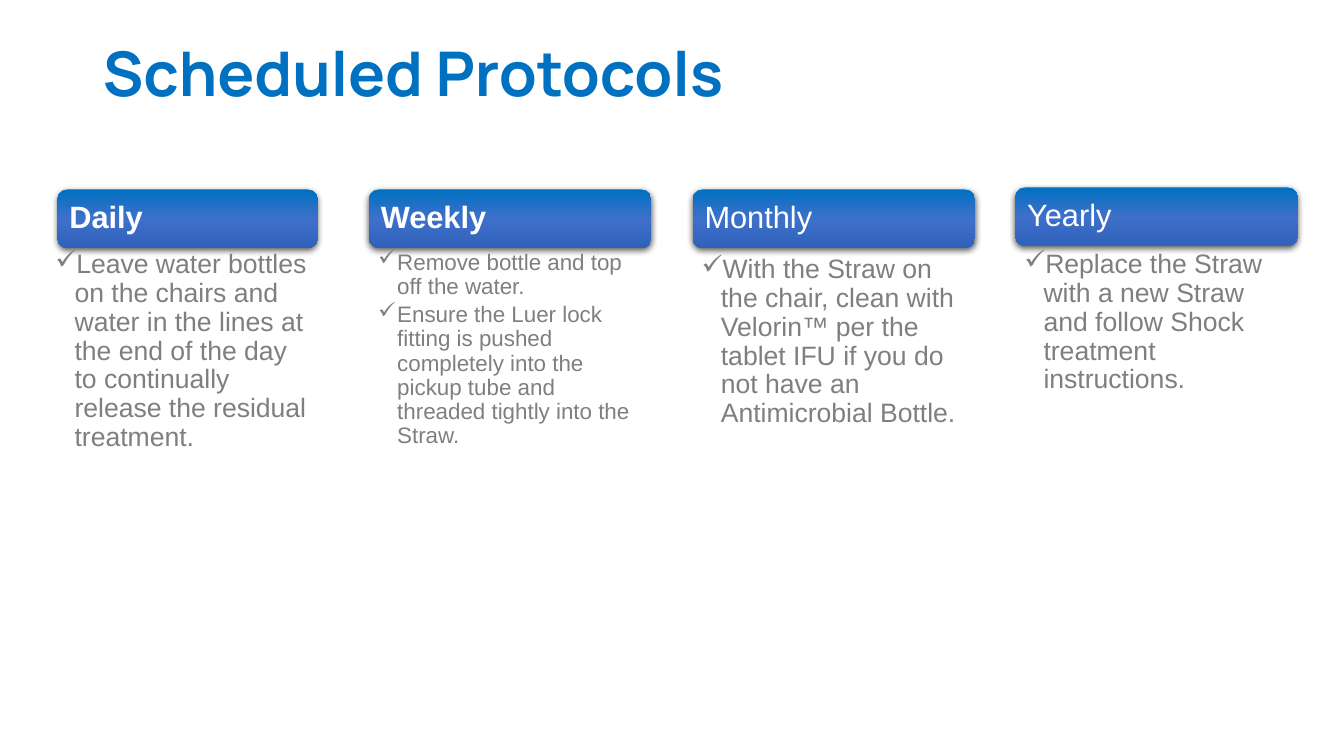
import copy
import pptx
import pptx.dml.color
import pptx.enum.shapes
import pptx.enum.text
import pptx.oxml
import pptx.oxml.ns
import pptx.util

Inches = pptx.util.Inches
Pt = pptx.util.Pt
Anchor = pptx.enum.text.MSO_ANCHOR
Align = pptx.enum.text.PP_ALIGN

TITLE = "Scheduled Protocols"
COLORS = {"title": "0070C0", "head": "FFFFFF", "body": "7F7F7F"}
BLEND = [(0, "0070C0"), (0.5, "3E70CA"), (1, "3062BB")]
CARDS = [
    {"head": "Daily", "bold": True, "size": 19, "pad": 0.15,
     "bar": (0.57, 1.88, 2.58), "box": (0.46, 2.46, 2.06),
     "items": ["Leave water bottles on the chairs and water in the lines at the end "
               "of the day to continually release the residual treatment."]},
    {"head": "Weekly", "bold": True, "size": 16, "pad": 0.16,
     "bar": (3.66, 1.88, 2.8), "box": (3.66, 2.46, 2.04),
     "items": ["Remove bottle and top off the water.",
               "Ensure the Luer lock fitting is pushed completely into the pickup "
               "tube and threaded tightly into the Straw."]},
    {"head": "Monthly", "bold": False, "size": 19, "pad": 0.15,
     "bar": (6.87, 1.88, 2.8), "box": (6.87, 2.51, 1.77),
     "items": ["With the Straw on the chair, clean with Velorin™ per the tablet IFU "
               "if you do not have an Antimicrobial Bottle."]},
    {"head": "Yearly", "bold": False, "size": 19, "pad": 0.19,
     "bar": (10.07, 1.86, 2.8), "box": (10.07, 2.46, 1.49),
     "items": ["Replace the Straw with a new Straw and follow Shock treatment "
               "instructions."]},
]
BAR_H = 0.58
BOX_W = 2.8
HANG = 0.19
NS = pptx.oxml.ns.nsdecls("a")
SHADOW = (f'<a:outerShdw {NS} blurRad="{Pt(4.5)}" dist="{Pt(1.5)}" dir="5400000" '
          'algn="ctr" rotWithShape="0"><a:srgbClr val="000000">'
          '<a:alpha val="63000"/></a:srgbClr></a:outerShdw>')
BULLET = f'<a:buChar {NS} char="✓"/>'


def rgb(code):
    return pptx.dml.color.RGBColor.from_string(code)


def style(par, font, size, color, bold=False):
    par.alignment = Align.LEFT
    par.line_spacing = 0.9
    for run in par.runs:
        run.font.name = font
        run.font.size = Pt(size)
        run.font.bold = bold
        run.font.color.rgb = rgb(color)


def inset(frame, left, top, right, bottom):
    frame.word_wrap = True
    frame.margin_left, frame.margin_top = Inches(left), Inches(top)
    frame.margin_right, frame.margin_bottom = Inches(right), Inches(bottom)


def add_title(slide):
    title = slide.shapes.title
    title.left, title.top = Inches(0.92), Inches(0.4)
    title.width, title.height = Inches(7.51), Inches(0.71)
    frame = title.text_frame
    frame.text = TITLE
    frame.vertical_anchor = Anchor.MIDDLE
    inset(frame, 0.1, 0.05, 0.1, 0.05)
    style(frame.paragraphs[0], "Manrope", 44, COLORS["title"], True)


def add_bar(slide, card):
    left, top, width = card["bar"]
    bar = slide.shapes.add_shape(
        pptx.enum.shapes.MSO_SHAPE.ROUNDED_RECTANGLE,
        Inches(left), Inches(top), Inches(width), Inches(BAR_H))
    bar.line.fill.background()
    bar.fill.gradient()
    bar.fill.gradient_angle = 270
    props = bar.element.spPr
    stops = props.find(".//" + pptx.oxml.ns.qn("a:gsLst"))
    stops.append(copy.deepcopy(stops[-1]))
    for stop, (place, color) in zip(bar.fill.gradient_stops, BLEND):
        stop.position = place
        stop.color.rgb = rgb(color)
    bar.shadow.inherit = False
    glow = props.find(pptx.oxml.ns.qn("a:effectLst"))
    glow.append(pptx.oxml.parse_xml(SHADOW))
    frame = bar.text_frame
    frame.text = card["head"]
    frame.vertical_anchor = Anchor.MIDDLE
    inset(frame, 0.09, 0.09, 0.09, 0.09)
    style(frame.paragraphs[0], "Arial", 22, COLORS["head"], card["bold"])


def add_list(slide, card):
    left, top, height = card["box"]
    box = slide.shapes.add_textbox(
        Inches(left), Inches(top), Inches(BOX_W), Inches(height))
    frame = box.text_frame
    frame.text = "\n".join(card["items"])
    inset(frame, 0.09, 0.03, card["pad"], 0.03)
    for par in frame.paragraphs:
        style(par, "Arial", card["size"], COLORS["body"])
        par.space_after = Pt(round(card["size"] * 0.2))
        props = par._p.get_or_add_pPr()
        props.set("marL", str(Inches(HANG)))
        props.set("indent", str(-Inches(HANG)))
        props.append(pptx.oxml.parse_xml(BULLET))


def main():
    deck = pptx.Presentation()
    deck.slide_width, deck.slide_height = Inches(13.33), Inches(7.5)
    slide = deck.slides.add_slide(deck.slide_layouts[5])
    add_title(slide)
    for card in CARDS:
        add_bar(slide, card)
        add_list(slide, card)
    deck.save("out.pptx")


if __name__ == "__main__":
    main()
